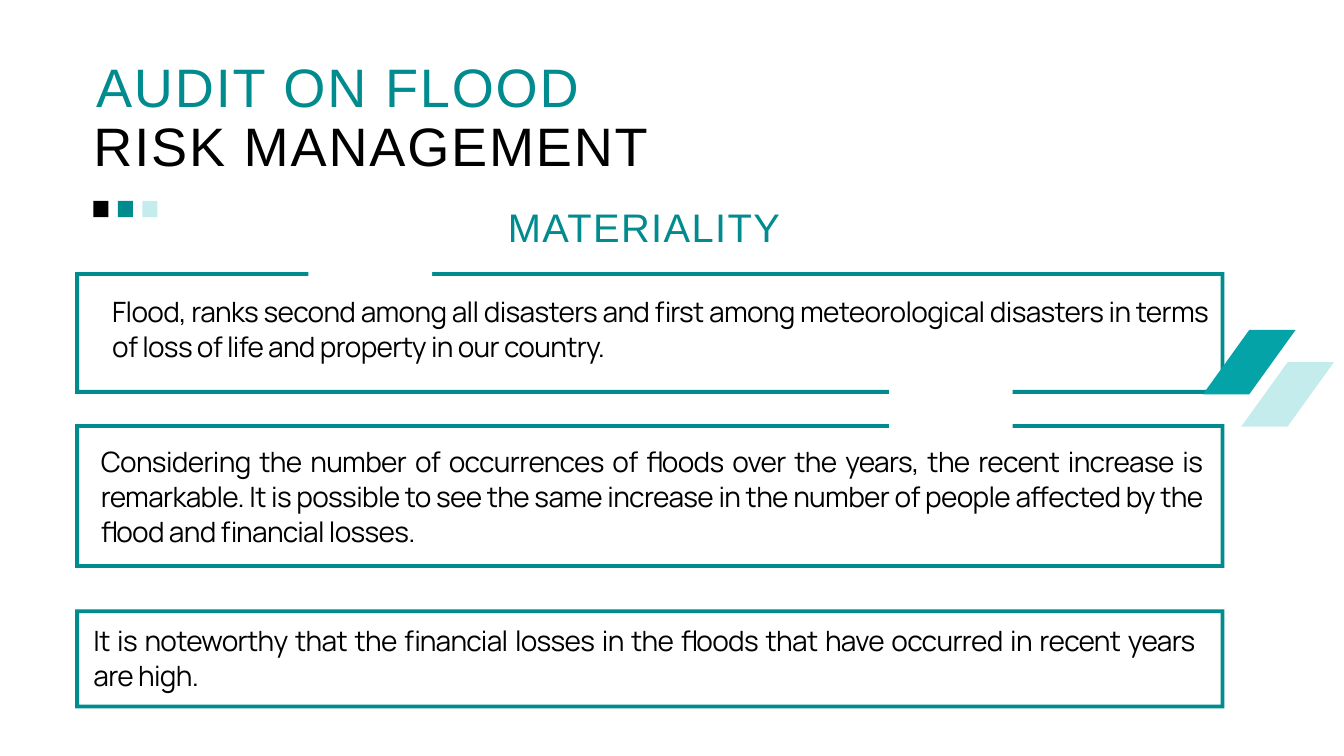
from pptx import Presentation
from pptx.dml.color import RGBColor
from pptx.enum.shapes import MSO_SHAPE
from pptx.enum.text import MSO_ANCHOR, PP_ALIGN
from pptx.util import Inches, Pt

RECT, FRAME, SLANT = MSO_SHAPE.RECTANGLE, MSO_SHAPE.FRAME, MSO_SHAPE.PARALLELOGRAM
LEFT, CENTER, JUSTIFY = PP_ALIGN.LEFT, PP_ALIGN.CENTER, PP_ALIGN.JUSTIFY
TOP = MSO_ANCHOR.TOP
COLORS = {"teal": "008B8F", "bright": "04A3A8", "pale": "C4ECED",
          "black": "000000", "white": "FFFFFF"}

prs = Presentation()
prs.slide_width, prs.slide_height = Inches(20), Inches(11.25)
s = prs.slides.add_slide(prs.slide_layouts[6])


def box(x, y, w, h):
    """Turn percentages of the slide's width and height into lengths."""
    sw, sh = prs.slide_width / 100, prs.slide_height / 100
    return int(x * sw), int(y * sh), int(w * sw), int(h * sh)


def add_solid(kind, area, color, adj=None):
    sp = s.shapes.add_shape(kind, *box(*area))
    sp.shadow.inherit = False
    sp.fill.solid()
    sp.fill.fore_color.rgb = RGBColor.from_string(COLORS[color])
    sp.line.fill.background()
    if adj is not None:
        sp.adjustments[0] = adj
    return sp


# Bordered panels: top and height; the border is half a percent of the slide height
for y, h in [(36, 16.09), (56.09, 19.02), (80.62, 13.07)]:
    add_solid(FRAME, (5.6, y, 85.5, h), "teal", 0.5 / h)

# White gaps in the borders
for x, y in [(22.95, 34.4), (66.15, 46.04)]:
    add_solid(RECT, (x, y, 9.2, 11.6), "white")

# Slanted bars, the second half a bar lower
for i, color in enumerate(["bright", "pale"]):
    add_solid(SLANT, (89.5 + 2.85 * i, 43.64 + 4.27 * i, 6.9, 8.53), color, 0.72)

# Three small squares under the title
for i, color in enumerate(["black", "teal", "pale"]):
    add_solid(RECT, (6.95 + 1.82 * i, 26.58, 1.12, 2.13), color)

# Style: font, size, line spacing, letter spacing in hundredths of a point
TITLE = ("Arial", 58, 81.3, 200)
HEADING = ("Arial", 42.7, 59.8, 150)
BODY = ("Manrope", 30, 37.5, -70)

texts = [
    ("AUDIT ON FLOOD", (7.15, 5.6, 42.85, 9.6), TITLE, "teal", LEFT),
    ("RISK MANAGEMENT", (6.95, 13.42, 43.05, 9.6), TITLE, "black", JUSTIFY),
    ("MATERIALITY", (32.15, 25.78, 31.55, 14.4), HEADING, "teal", CENTER),
    ("Flood, ranks second among all disasters and first among meteorological "
     "disasters in terms of loss of life and property in our country.",
     (8.35, 38.76, 81.55, 14.04), BODY, "black", JUSTIFY),
    ("Considering the number of occurrences of floods over the years, the recent "
     "increase is remarkable. It is possible to see the same increase in the number "
     "of people affected by the flood and financial losses.",
     (7.5, 58.67, 82, 18.67), BODY, "black", JUSTIFY),
    ("It is noteworthy that the financial losses in the floods that have occurred "
     "in recent years are high.",
     (6.95, 82.31, 82, 14.04), BODY, "black", JUSTIFY),
]
for text, area, (font, size, leading, tracking), color, align in texts:
    tf = s.shapes.add_textbox(*box(*area)).text_frame
    tf.word_wrap = True
    tf.vertical_anchor = TOP
    tf.margin_left = tf.margin_right = tf.margin_top = tf.margin_bottom = 0
    p = tf.paragraphs[0]
    p.text = text
    p.alignment = align
    p.line_spacing = Pt(leading)
    r = p.runs[0]
    r.font.name = font
    r.font.size = Pt(size)
    r.font.color.rgb = RGBColor.from_string(COLORS[color])
    r.font._element.set("spc", str(tracking))

prs.save("out.pptx")
